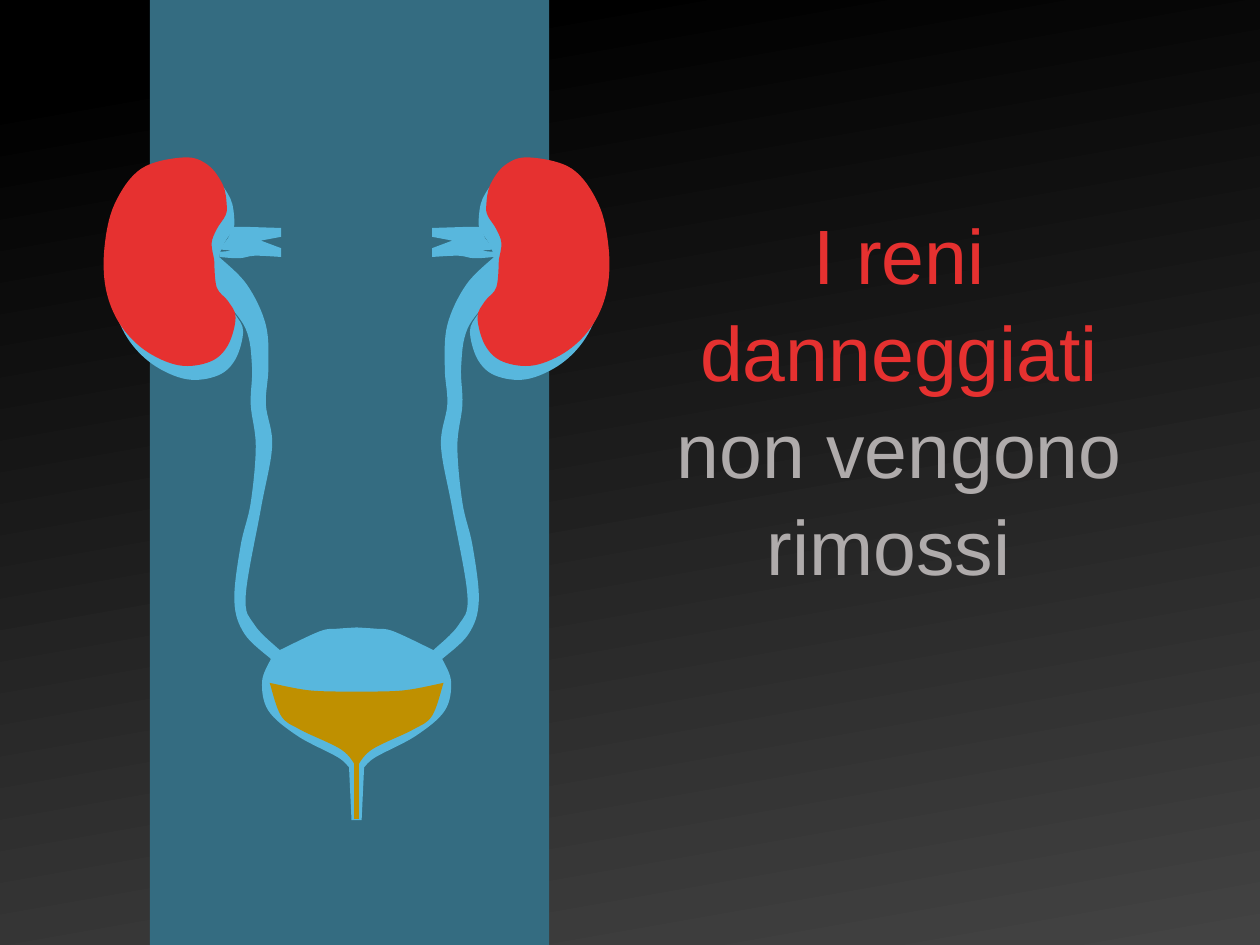
from lxml.etree import SubElement
from pptx import Presentation
from pptx.dml.color import RGBColor
from pptx.enum.shapes import MSO_CONNECTOR, MSO_SHAPE
from pptx.enum.text import MSO_AUTO_SIZE, PP_ALIGN
from pptx.oxml.ns import qn
from pptx.util import Cm, Pt

BLACK = RGBColor(0x00, 0x00, 0x00)
CHARCOAL = RGBColor(0x43, 0x43, 0x43)
TEAL = RGBColor(0x34, 0x6C, 0x81)
SKY = RGBColor(0x58, 0xB7, 0xDD)
AMBER = RGBColor(0xBF, 0x90, 0x00)
RED = RGBColor(0xE6, 0x31, 0x30)
GREY = RGBColor(0xAF, 0xAB, 0xAB)

# Outlines of the left side, as strokes: smooth within a stroke, with a corner between two
UNIT = Cm(0.0254)
FINE = 10  # steps per unit, so that curves round well
AXIS = 283  # the body's line of symmetry

HALF_TRACT = [
    [(279, 651)],
    [(277, 609), (268, 601), (236, 584), (213, 564), (208, 541), (215, 523)],
    [(215, 523), (194, 503), (186, 477), (191, 433), (199, 399), (203, 354),
     (199, 321), (200, 291), (195, 261), (174, 230), (174, 204)],
    [(174, 204), (196, 226), (211, 258), (213, 292), (211, 321), (216, 354),
     (207, 404), (195, 473), (202, 496), (222, 516)],
    [(222, 516), (254, 501), (268, 499), (283, 498)],
]
HALF_URINE = [
    [(283, 609), (271, 595), (238, 579), (223, 568), (214, 542)],
    [(214, 542), (246, 548), (283, 549)],
]
VESSELS = [
    [(174, 200), (183, 199), (174, 198)],
    [(181, 189), (185, 180)],
    [(193, 180), (223, 181)],
    [(223, 188)], [(207, 191)], [(223, 197)],
    [(223, 204), (202, 203), (190, 205), (174, 204)],
]
KIDNEY = [
    [(176, 217), (174, 204), (178, 193), (185, 182), (186, 174), (183, 158),
     (171, 142), (152, 136), (118, 145), (97, 173), (89, 207), (90, 240),
     (101, 268), (121, 289), (148, 301), (173, 298), (187, 285), (193, 263),
     (187, 250), (178, 239), (176, 217)],
]


def mirror(strokes):
    return [[(2 * AXIS - x, y) for x, y in reversed(stroke)] for stroke in reversed(strokes)]


def toward(point, start, end, share):
    return tuple(p + (e - s) * share for p, s, e in zip(point, start, end))


def curve_points(strokes):
    """Return the start, then two control points and an end for each curve."""
    points = [strokes[0][0]]
    for stroke in strokes:
        if stroke[0] != points[-1]:
            points += [points[-1], stroke[0], stroke[0]]
        knots = [stroke[0], *stroke, stroke[-1]]
        for before, start, end, after in zip(knots, knots[1:], knots[2:], knots[3:]):
            points += [toward(start, before, end, 1 / 6), toward(end, after, start, 1 / 6), end]
    return points


def add_span(para, text, size=44, font="Arial", color=GREY):
    span = para.add_run()
    span.text = text
    span.font.size = Pt(size)
    span.font.name = font
    span.font.color.rgb = color


class SlideBuilder:
    def __init__(self, deck):
        self.slide = deck.slides.add_slide(deck.slide_layouts[6])
        self.shapes = self.slide.shapes

    def background(self, angle, *stops):
        fill = self.slide.background.fill
        fill.gradient()
        fill.gradient_angle = 360 - angle
        for stop, (position, color) in zip(fill.gradient_stops, stops):
            stop.position = position
            stop.color.rgb = color

    def paint(self, shape, color):
        shape.shadow.inherit = False
        shape.fill.solid()
        shape.fill.fore_color.rgb = color
        shape.line.fill.background()

    def band(self, left, top, width, height, color):
        shape = self.shapes.add_shape(MSO_SHAPE.RECTANGLE, Cm(left), Cm(top), Cm(width), Cm(height))
        self.paint(shape, color)

    def organ(self, strokes, color):
        points = [(x * FINE, y * FINE) for x, y in curve_points(strokes)]
        builder = self.shapes.build_freeform(*points[0], scale=UNIT / FINE)
        builder.add_line_segments(points[1:], close=True)
        shape = builder.convert_to_shape()
        # Join every three line points into one Bézier curve
        segments = list(shape.element.iter(qn("a:lnTo")))
        for first in range(0, len(segments) - 2, 3):
            curve = SubElement(segments[first].getparent(), qn("a:cubicBezTo"))
            segments[first].addprevious(curve)
            for segment in segments[first:first + 3]:
                curve.append(segment[0])
                segment.getparent().remove(segment)
        self.paint(shape, color)

    def pair(self, strokes, color, shift=(0, 0)):
        moved = [[(x + shift[0], y + shift[1]) for x, y in stroke] for stroke in strokes]
        for side in (moved, mirror(moved)):
            self.organ(side, color)

    def line(self, start, end, color, width):
        connector = self.shapes.add_connector(
            MSO_CONNECTOR.STRAIGHT, *[Cm(value) for value in start + end])
        connector.line.color.rgb = color
        connector.line.width = Pt(width)
        SubElement(connector.element.spPr, qn("a:effectLst"))

    def text(self, left, top, width, height, spans, spacing):
        box = self.shapes.add_textbox(Cm(left), Cm(top), Cm(width), Cm(height))
        box.text_frame.word_wrap = True
        box.text_frame.auto_size = MSO_AUTO_SIZE.SHAPE_TO_FIT_TEXT
        para = box.text_frame.paragraphs[0]
        para.alignment = PP_ALIGN.CENTER
        para.line_spacing = spacing
        for text, color in spans:
            add_span(para, text, color=color)


def main():
    deck = Presentation()
    deck.slide_width, deck.slide_height = Cm(25.4), Cm(19.05)
    page = SlideBuilder(deck)

    # Background and torso
    page.background(80, (0.08, BLACK), (1, CHARCOAL))
    page.band(3.02, 0, 8.05, 19.05, TEAL)

    # Message
    page.text(12.73, 3.96, 10.8, 7.77,
              [("I reni danneggiati ", RED), ("non vengono rimossi ", GREY)], spacing=1.05)

    # Ureters, bladder and vessels
    page.organ(HALF_TRACT + mirror(HALF_TRACT), SKY)
    page.organ(HALF_URINE + mirror(HALF_URINE), AMBER)
    page.pair(VESSELS, SKY)

    # Kidneys, each damaged one in front of its blue shade
    page.pair(KIDNEY, SKY)
    page.line((7.19, 16.51), (7.19, 14.91), AMBER, width=3)
    page.pair(KIDNEY, RED, shift=(-6, -11))

    deck.save("out.pptx")


if __name__ == "__main__":
    main()
